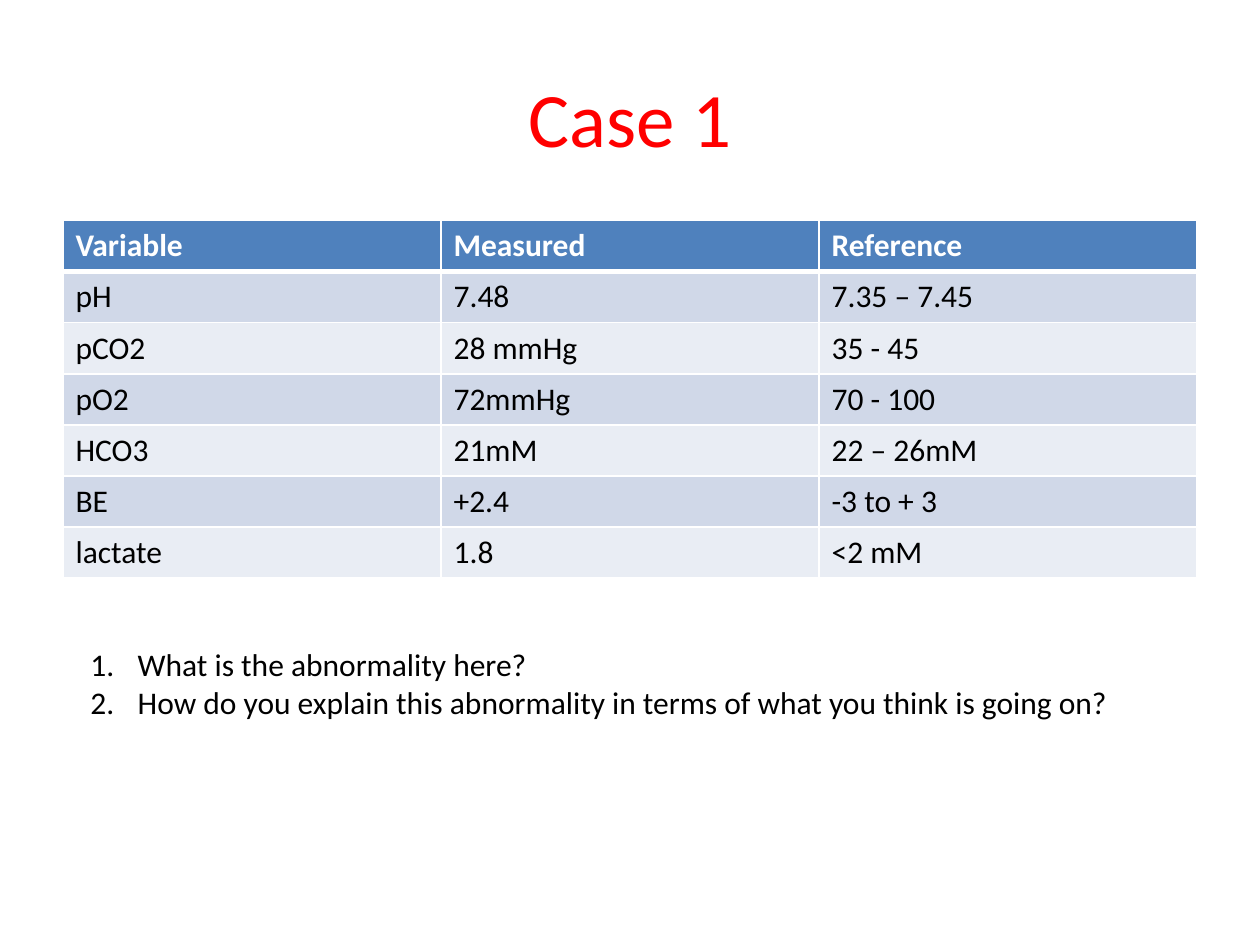
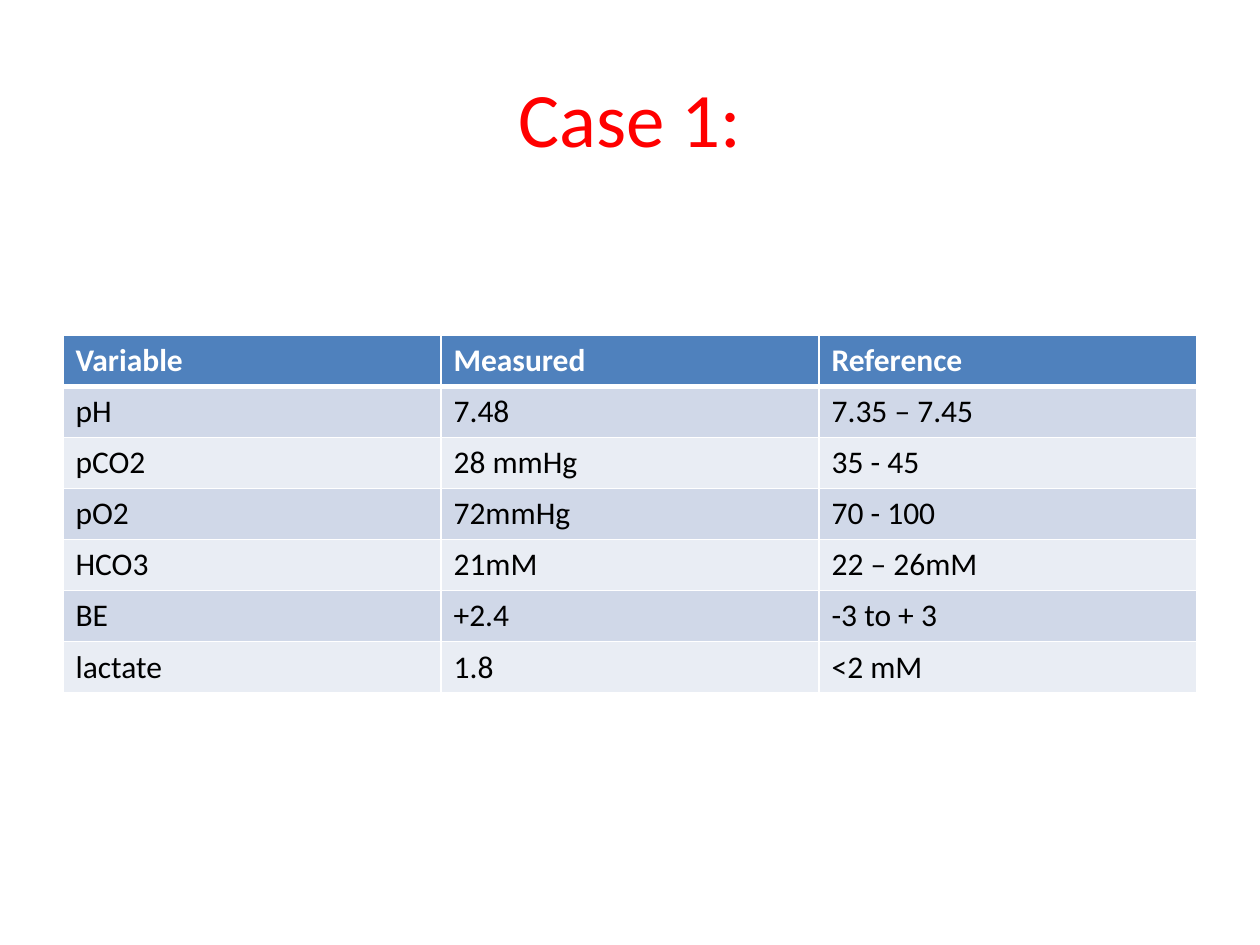
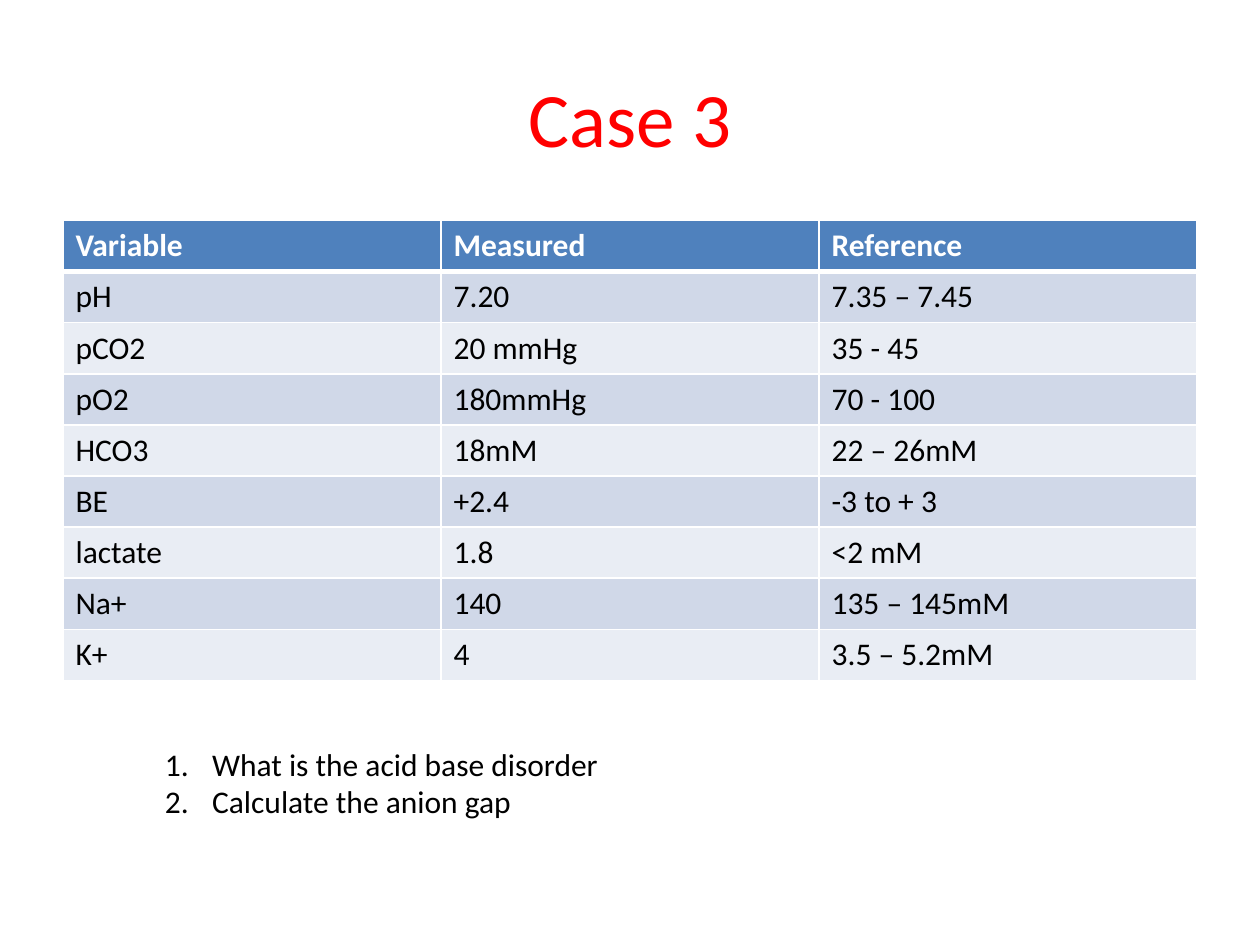
from dataclasses import dataclass

from lxml import etree
from pptx import Presentation
from pptx.dml.color import RGBColor
from pptx.enum.text import MSO_ANCHOR, MSO_AUTO_SIZE, PP_ALIGN
from pptx.oxml.ns import qn
from pptx.util import Pt

CENTER = PP_ALIGN.CENTER
MIDDLE = MSO_ANCHOR.MIDDLE
GROW = MSO_AUTO_SIZE.SHAPE_TO_FIT_TEXT
BLANK_LAYOUT = 6


@dataclass(frozen=True)
class Theme:
    font: str = "Calibri"
    title_size: int = 44
    body_size: int = 18
    title: str = "FF0000"
    text: str = "000000"
    header: str = "4F81BD"
    header_text: str = "FFFFFF"
    bands: tuple = ("D0D8E8", "E9EDF4")
    rule: str = "FFFFFF"
    rule_width: int = 1
    header_rule_width: int = 3


THEME = Theme()

# Shared geometry in points
SLIDE_SIZE = (720, 540)
TITLE_BOX = (36, 21.6, 648, 90)
TABLE_LEFT, TABLE_WIDTH, ROW_HEIGHT = 36, 648, 29.2
HIGH_TABLE, LOW_TABLE = 126, 191.5
NUMBER_INDENT = 27

# Case content
HEADINGS = ("Variable", "Measured", "Reference")
REFERENCES = {
    "pH": "7.35 – 7.45",
    "pCO2": "35 - 45",
    "pO2": "70 - 100",
    "HCO3": "22 – 26mM",
    "BE": "-3 to + 3",
    "lactate": "<2 mM",
    "Na+": "135 – 145mM",
    "K+": "3.5 – 5.2mM",
}
CASE_1 = ("7.48", "28 mmHg", "72mmHg", "21mM", "+2.4", "1.8")
CASE_3 = ("7.20", "20 mmHg", "180mmHg", "18mM", "+2.4", "1.8", "140", "4")
CASE_1_QUESTIONS = (
    "What is the abnormality here?",
    "How do you explain this abnormality in terms of what you think is going on?",
)
CASE_3_QUESTIONS = ("What is the acid base disorder", "Calculate the anion gap")


def style_text(paragraph, size, color, bold=False):
    for run in paragraph.runs:
        font = run.font
        font.name, font.size, font.bold = THEME.font, Pt(size), bold
        font.color.rgb = RGBColor.from_string(color)


def add_title(slide, box, title):
    frame = slide.shapes.add_textbox(*map(Pt, box)).text_frame
    frame.word_wrap = True
    frame.vertical_anchor = MIDDLE
    frame.text = title
    frame.paragraphs[0].alignment = CENTER
    style_text(frame.paragraphs[0], THEME.title_size, THEME.title)


def set_borders(cell, **widths):
    properties = cell._tc.get_or_add_tcPr()
    for side, width in widths.items():
        line = etree.SubElement(properties, qn(f"a:ln{side}"), w=str(Pt(width)))
        fill = etree.SubElement(line, qn("a:solidFill"))
        etree.SubElement(fill, qn("a:srgbClr"), val=THEME.rule)


def add_results(slide, box, measured):
    rows = [HEADINGS]
    rows += [(name, value, reference)
             for (name, reference), value in zip(REFERENCES.items(), measured)]
    results = slide.shapes.add_table(len(rows), len(HEADINGS), *map(Pt, box)).table
    for r, row in enumerate(rows):
        results.rows[r].height = Pt(box[3] / len(rows))
        is_header = r == 0
        fill = THEME.header if is_header else THEME.bands[(r - 1) % 2]
        color = THEME.header_text if is_header else THEME.text
        # The heavy rule lies between the header and the first result
        thin, heavy = THEME.rule_width, THEME.header_rule_width
        top = heavy if r == 1 else thin
        bottom = heavy if is_header else thin
        for c, value in enumerate(row):
            cell = results.cell(r, c)
            set_borders(cell, L=thin, R=thin, T=top, B=bottom)
            cell.fill.solid()
            cell.fill.fore_color.rgb = RGBColor.from_string(fill)
            cell.text_frame.text = value
            style_text(cell.text_frame.paragraphs[0], THEME.body_size, color, is_header)


def add_questions(slide, box, questions):
    frame = slide.shapes.add_textbox(*map(Pt, box)).text_frame
    frame.word_wrap = False
    frame.auto_size = GROW
    frame.text = "\n".join(questions)
    for question in frame.paragraphs:
        style_text(question, THEME.body_size, THEME.text)
        properties = question._p.get_or_add_pPr()
        properties.set("marL", str(Pt(NUMBER_INDENT)))
        properties.set("indent", str(-Pt(NUMBER_INDENT)))
        etree.SubElement(properties, qn("a:buFont"), typeface="+mj-lt")
        etree.SubElement(properties, qn("a:buAutoNum"), type="arabicPeriod")


def add_case(deck, title, table_top, measured, questions=(), questions_box=None):
    slide = deck.slides.add_slide(deck.slide_layouts[BLANK_LAYOUT])
    add_title(slide, TITLE_BOX, title)
    table_height = ROW_HEIGHT * (len(measured) + 1)
    add_results(slide, (TABLE_LEFT, table_top, TABLE_WIDTH, table_height), measured)
    if questions:
        add_questions(slide, questions_box, questions)


def main():
    deck = Presentation()
    deck.slide_width, deck.slide_height = map(Pt, SLIDE_SIZE)
    add_case(deck, "Case 1", HIGH_TABLE, CASE_1,
             CASE_1_QUESTIONS, (44.6, 365, 602, 51))
    add_case(deck, "Case 1:", LOW_TABLE, CASE_1)
    add_case(deck, "Case 3", HIGH_TABLE, CASE_3,
             CASE_3_QUESTIONS, (87.1, 422, 265, 51))
    deck.save("out.pptx")


if __name__ == "__main__":
    main()
